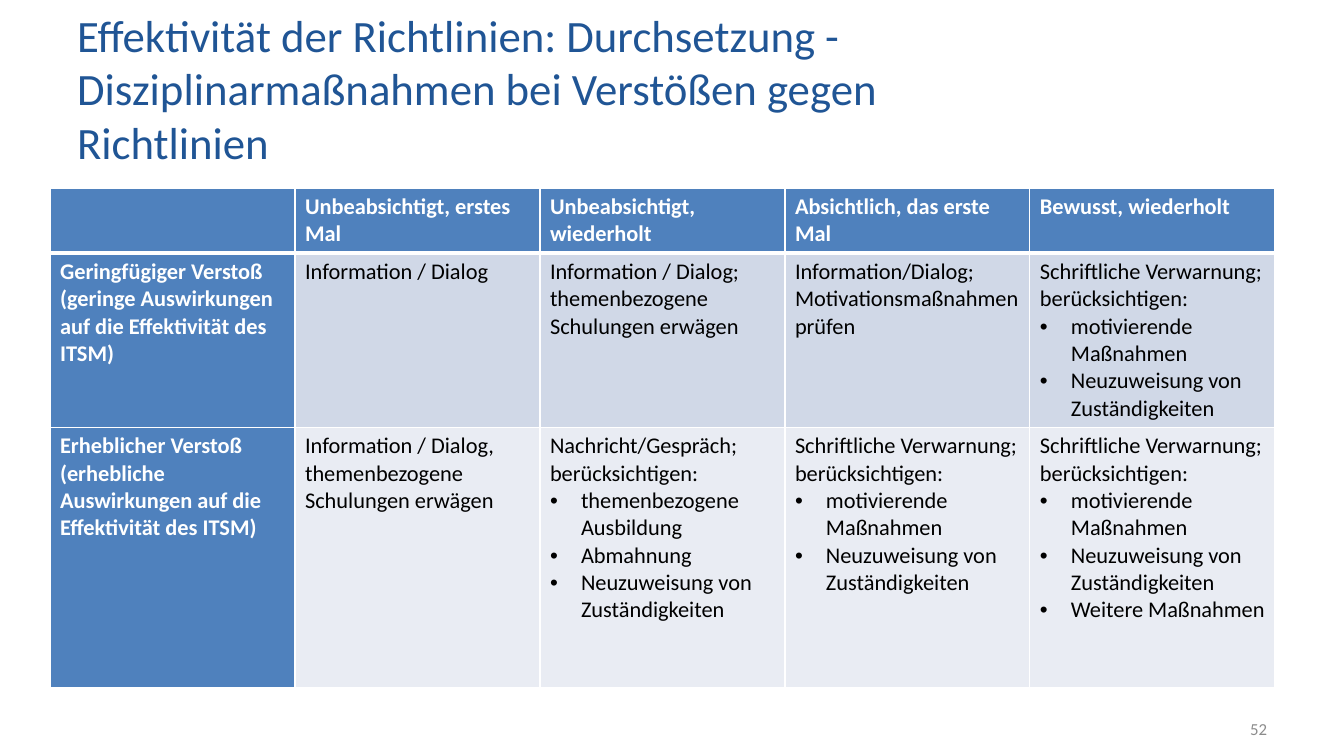
from lxml import etree
from pptx import Presentation
from pptx.dml.color import RGBColor
from pptx.enum.text import MSO_ANCHOR, MSO_AUTO_SIZE, PP_ALIGN
from pptx.oxml.ns import qn
from pptx.util import Inches, Pt

PX_PER_INCH = 100.8
MIDDLE = MSO_ANCHOR.MIDDLE
NO_AUTOFIT = MSO_AUTO_SIZE.NONE
LEFT, RIGHT = PP_ALIGN.LEFT, PP_ALIGN.RIGHT

FONT = "Calibri"
WHITE, BLACK = "FFFFFF", "000000"
TITLE_BLUE, HEAD_BLUE, GREY = "205595", "4F81BD", "8C8C8C"
BAND_FILLS = ["D0D8E7", "E9ECF3"]
THIN, THICK = 0.96, 3

COL_WIDTH = 245
ROW_HEIGHTS = [64, 174, 260]
BULLET_INDENT = 31

TITLE = ("Effektivität der Richtlinien: Durchsetzung - "
         "Disziplinarmaßnahmen bei Verstößen gegen Richtlinien")
WARNING = "Schriftliche Verwarnung; berücksichtigen:"
MOTIVATE = "motivierende Maßnahmen"
REASSIGN = "Neuzuweisung von Zuständigkeiten"

# Each cell holds a lead paragraph followed by its bullet points.
ROWS = [
    [
        [],
        ["Unbeabsichtigt, erstes Mal"],
        ["Unbeabsichtigt, wiederholt"],
        ["Absichtlich, das erste Mal"],
        ["Bewusst, wiederholt"],
    ],
    [
        ["Geringfügiger Verstoß (geringe Auswirkungen auf die Effektivität des ITSM)"],
        ["Information / Dialog"],
        ["Information / Dialog; themenbezogene Schulungen erwägen"],
        ["Information/Dialog; Motivationsmaßnahmen prüfen"],
        [WARNING, MOTIVATE, REASSIGN],
    ],
    [
        ["Erheblicher Verstoß (erhebliche Auswirkungen auf die Effektivität des ITSM)"],
        ["Information / Dialog, themenbezogene Schulungen erwägen"],
        ["Nachricht/Gespräch; berücksichtigen:", "themenbezogene Ausbildung",
         "Abmahnung", REASSIGN],
        [WARNING, MOTIVATE, REASSIGN],
        [WARNING, MOTIVATE, REASSIGN, "Weitere Maßnahmen"],
    ],
]


def px(n):
    return Inches(n / PX_PER_INCH)


def rgb(color):
    return RGBColor.from_string(color)


def place(sp, x, y, w, h):
    sp.left, sp.top, sp.width, sp.height = px(x), px(y), px(w), px(h)


def add_run(p, text, size, color, bold=False):
    r = p.add_run()
    r.text = text
    r.font.name = FONT
    r.font.size = Pt(size)
    r.font.bold = bold
    r.font.color.rgb = rgb(color)


def set_bullet(p):
    pPr = p._p.get_or_add_pPr()
    pPr.set("marL", str(px(BULLET_INDENT)))
    pPr.set("indent", str(-px(BULLET_INDENT)))
    etree.SubElement(pPr, qn("a:buFont")).set("typeface", "Arial")
    etree.SubElement(pPr, qn("a:buChar")).set("char", "•")


def set_border(cell, side, width):
    tcPr = cell._tc.get_or_add_tcPr()
    ln = etree.SubElement(tcPr, qn(f"a:ln{side}"), w=str(Pt(width)))
    fill = etree.SubElement(ln, qn("a:solidFill"))
    etree.SubElement(fill, qn("a:srgbClr")).set("val", WHITE)


def fill_cell(cell, paragraphs, row, col):
    heading = row == 0 or col == 0
    set_border(cell, "L", THIN)
    set_border(cell, "R", THIN)
    set_border(cell, "T", THICK if row == 1 else THIN)
    set_border(cell, "B", THICK if row == 0 else THIN)
    cell.fill.solid()
    cell.fill.fore_color.rgb = rgb(HEAD_BLUE if heading else BAND_FILLS[row - 1])
    tf = cell.text_frame
    for i, text in enumerate(paragraphs):
        p = tf.add_paragraph() if i else tf.paragraphs[0]
        if i:
            set_bullet(p)
        add_run(p, text, 16, WHITE if heading else BLACK, heading)


def add_title(s):
    sp = s.shapes.title
    place(sp, 67, 30, 999, 116)
    tf = sp.text_frame
    tf.word_wrap = True
    tf.auto_size = NO_AUTOFIT
    tf.vertical_anchor = MIDDLE
    p = tf.paragraphs[0]
    p.alignment = LEFT
    add_run(p, TITLE, 32, TITLE_BLUE)


def add_measures_table(s):
    cols = len(ROWS[0])
    frame = s.shapes.add_table(len(ROWS), cols, px(50), px(188),
                               px(cols * COL_WIDTH), px(sum(ROW_HEIGHTS)))
    table = frame.table
    table.horz_banding = False
    for column in table.columns:
        column.width = px(COL_WIDTH)
    for row, height in enumerate(ROW_HEIGHTS):
        table.rows[row].height = px(height)
        for col, paragraphs in enumerate(ROWS[row]):
            fill_cell(table.cell(row, col), paragraphs, row, col)


def add_page_number(s):
    sp = s.shapes.add_textbox(px(964), px(709), px(313), px(40))
    tf = sp.text_frame
    tf.word_wrap = True
    tf.vertical_anchor = MIDDLE
    p = tf.paragraphs[0]
    p.alignment = RIGHT
    add_run(p, "52", 12, GREY)


def main():
    prs = Presentation()
    prs.slide_width, prs.slide_height = px(1344), px(756)
    s = prs.slides.add_slide(prs.slide_layouts[5])
    add_title(s)
    add_measures_table(s)
    add_page_number(s)
    prs.save("out.pptx")


if __name__ == "__main__":
    main()
